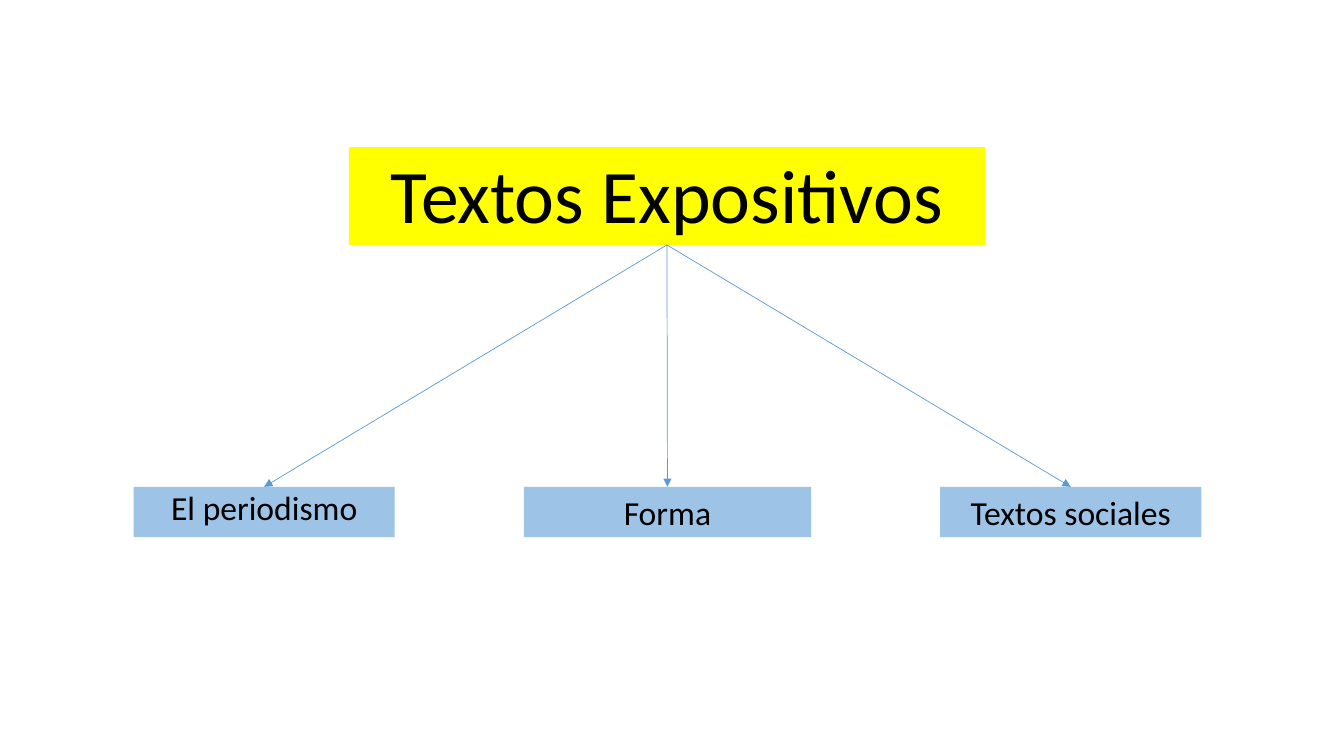
from lxml import etree
from pptx import Presentation
from pptx.dml.color import RGBColor
from pptx.enum.shapes import MSO_CONNECTOR
from pptx.enum.text import MSO_ANCHOR, MSO_AUTO_SIZE, PP_ALIGN
from pptx.oxml.ns import qn
from pptx.util import Inches, Pt

YELLOW = RGBColor(0xFF, 0xFF, 0x00)
PALE = RGBColor(0x9D, 0xC3, 0xE6)
BLUE = RGBColor(0x5B, 0x9B, 0xD5)
BLACK = RGBColor(0x00, 0x00, 0x00)

STRAIGHT = MSO_CONNECTOR.STRAIGHT
TOP, BOTTOM = MSO_ANCHOR.TOP, MSO_ANCHOR.BOTTOM
CENTER = PP_ALIGN.CENTER
NO_FIT = MSO_AUTO_SIZE.NONE
FONT = "Calibri"

# Connection sites of a rectangle
TOP_SITE, LOW_SITE = 0, 2

# Topic row: text, width, line spacing
MID, STEP = 6.62, 4
ROW_TOP, ROW_H = 4.83, 0.5
TOPICS = [
    ("El periodismo", 2.59, 0.9),
    ("Forma", 2.85, 1.0),
    ("Textos sociales", 2.59, 1.0),
]


def style(shape, text, fill, size, anchor, spacing):
    shape.fill.solid()
    shape.fill.fore_color.rgb = fill
    frame = shape.text_frame
    frame.word_wrap = True
    frame.auto_size = NO_FIT
    frame.vertical_anchor = anchor
    para = frame.paragraphs[0]
    para.alignment = CENTER
    para.line_spacing = spacing
    run = para.add_run()
    run.text = text
    run.font.name = FONT
    run.font.size = Pt(size)
    run.font.color.rgb = BLACK


def add_title(slide, text):
    title = slide.shapes.title
    title.left, title.top = Inches(3.46), Inches(1.46)
    title.width, title.height = Inches(6.31), Inches(0.97)
    style(title, text, YELLOW, 54, BOTTOM, 0.9)
    return title


def add_topic(slide, mid, text, width, spacing):
    box = slide.shapes.add_textbox(
        Inches(mid - width / 2), Inches(ROW_TOP), Inches(width), Inches(ROW_H))
    style(box, text, PALE, 24, TOP, spacing)
    return box


def add_arrow(slide, start, end):
    arrow = slide.shapes.add_connector(STRAIGHT, 0, 0, 0, 0)
    arrow.begin_connect(start, LOW_SITE)
    arrow.end_connect(end, TOP_SITE)
    arrow.line.color.rgb = BLUE
    arrow.line.width = Pt(0.5)
    # Arrowhead, and no shadow
    props = arrow.line._get_or_add_ln()
    etree.SubElement(props, qn("a:tailEnd"), type="triangle")
    etree.SubElement(arrow._element.spPr, qn("a:effectLst"))


def main():
    prs = Presentation()
    prs.slide_width, prs.slide_height = Inches(13.33), Inches(7.5)
    slide = prs.slides.add_slide(prs.slide_layouts[5])

    # Main idea
    title = add_title(slide, "Textos Expositivos")

    # Topics, evenly spaced around the middle
    boxes = [add_topic(slide, MID + (i - 1) * STEP, *topic)
             for i, topic in enumerate(TOPICS)]

    # Arrows from the main idea to each topic
    for box in boxes:
        add_arrow(slide, title, box)

    prs.save("out.pptx")


if __name__ == "__main__":
    main()
